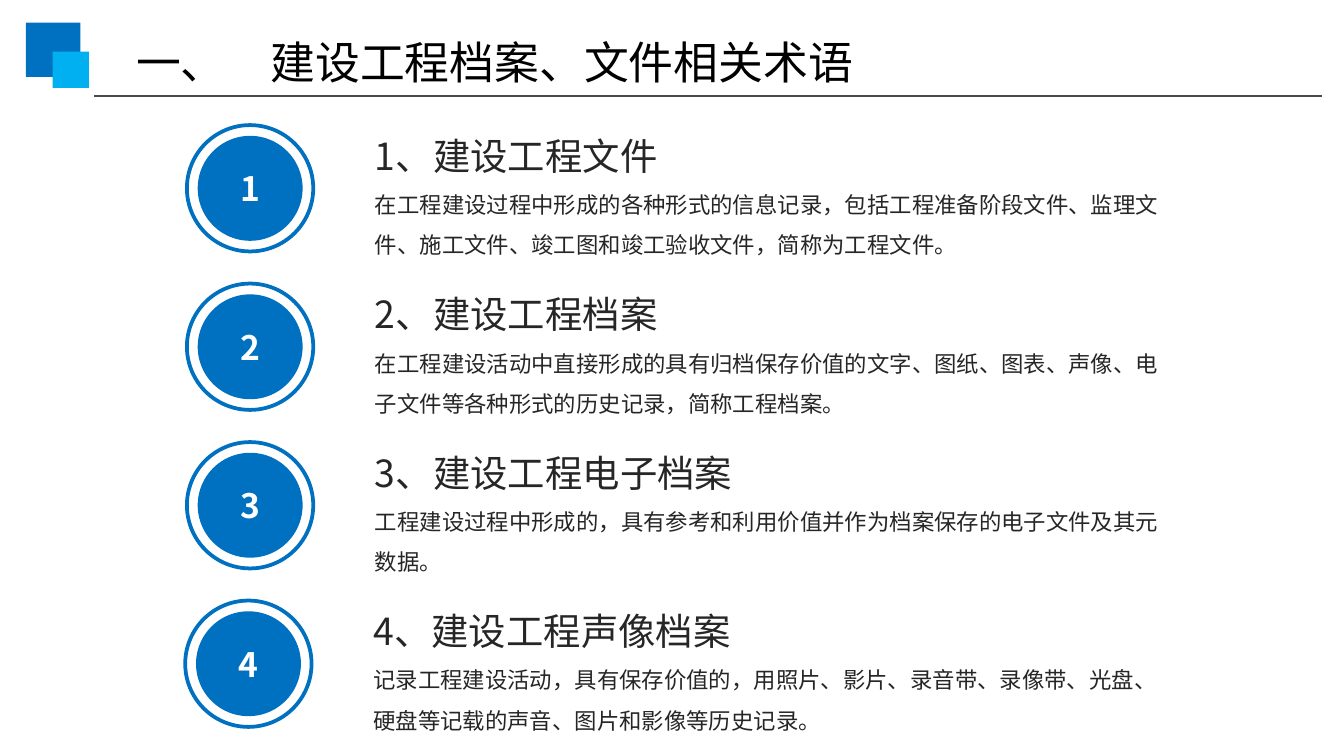
import dataclasses

import lxml.etree
import pptx
import pptx.dml.color
import pptx.enum.shapes
import pptx.enum.text
import pptx.oxml.ns
import pptx.util

Pt = pptx.util.Pt
RGBColor = pptx.dml.color.RGBColor
Shape = pptx.enum.shapes.MSO_SHAPE
Align = pptx.enum.text.PP_ALIGN
Anchor = pptx.enum.text.MSO_ANCHOR
qn = pptx.oxml.ns.qn

BLUE = RGBColor(0x00, 0x70, 0xC0)
SKY = RGBColor(0x00, 0xB0, 0xF0)
RULE_GREY = RGBColor(0x4D, 0x49, 0x48)
INK = RGBColor(0x26, 0x26, 0x26)
BLACK = RGBColor(0x00, 0x00, 0x00)
WHITE = RGBColor(0xFF, 0xFF, 0xFF)
FONT = "Noto Sans CJK SC"

# Vertical rhythm and badge geometry, in points
FIRST_TOP, ROW_STEP = 55.6, 84.9
DISC, RING = 56.2, 67.7
BADGE_CENTRE_Y = 45.3


@dataclasses.dataclass(frozen=True)
class Term:
    heading: str
    definition: str
    shift: float = 0


TERMS = [
    Term("建设工程文件",
         "在工程建设过程中形成的各种形式的信息记录，包括工程准备阶段文件、监理文件、"
         "施工文件、竣工图和竣工验收文件，简称为工程文件。"),
    Term("建设工程档案",
         "在工程建设活动中直接形成的具有归档保存价值的文字、图纸、图表、声像、电子文件"
         "等各种形式的历史记录，简称工程档案。"),
    Term("建设工程电子档案",
         "工程建设过程中形成的，具有参考和利用价值并作为档案保存的电子文件及其元数据。"),
    Term("建设工程声像档案",
         "记录工程建设活动，具有保存价值的，用照片、影片、录音带、录像带、光盘、硬盘"
         "等记载的声音、图片和影像等历史记录。", shift=-0.9),
]


def place(shape, left: float, top: float, width: float, height: float) -> None:
    shape.left, shape.top = Pt(left), Pt(top)
    shape.width, shape.height = Pt(width), Pt(height)


def add_run(paragraph, text: str, size: float, color: RGBColor, bold: bool = False) -> None:
    run = paragraph.add_run()
    run.text = text
    run.font.size = Pt(size)
    run.font.bold = bold
    run.font.color.rgb = color
    run.font.name = FONT
    east_asian = lxml.etree.SubElement(run.font._element, qn("a:ea"))
    east_asian.set("typeface", FONT)


def prepare_frame(frame) -> None:
    frame.word_wrap = True
    frame.auto_size = pptx.enum.text.MSO_AUTO_SIZE.NONE
    frame.vertical_anchor = Anchor.TOP


def add_plain(shapes, kind, left: float, top: float, width: float, height: float,
              fill: RGBColor | None = None, outline: RGBColor | None = None):
    shape = shapes.add_shape(kind, Pt(left), Pt(top), Pt(width), Pt(height))
    shape.shadow.inherit = False
    if fill is None:
        shape.fill.background()
    else:
        shape.fill.solid()
        shape.fill.fore_color.rgb = fill
    if outline is None:
        shape.line.fill.background()
    else:
        shape.line.color.rgb = outline
        shape.line.width = Pt(2)
    return shape


def add_header(slide) -> None:
    add_plain(slide.shapes, Shape.RECTANGLE, 13.9, 12.1, 29.2, 29.2, fill=BLUE)
    add_plain(slide.shapes, Shape.RECTANGLE, 28.2, 27.7, 19.5, 19.5, fill=SKY)
    rule = slide.shapes.add_connector(
        pptx.enum.shapes.MSO_CONNECTOR.STRAIGHT, Pt(708), Pt(51.5), Pt(50.4), Pt(51.5))
    rule.line.color.rgb = RULE_GREY
    rule.line.width = Pt(0.75)
    lxml.etree.SubElement(rule._element.spPr, qn("a:effectLst"))

    title = slide.shapes.title
    place(title, 65.7, 15.1, 461, 36.4)
    prepare_frame(title.text_frame)
    heading = title.text_frame.paragraphs[0]
    heading.alignment = Align.LEFT
    heading.line_spacing = 1.0
    add_run(heading, "一、\t建设工程档案、文件相关术语", 24, BLACK)


def fill_term(body, number: int, term: Term, top: float) -> None:
    place(body, 193.7 + term.shift, top, 438.5, 87.1)
    frame = body.text_frame
    prepare_frame(frame)
    heading, definition = frame.paragraphs[0], frame.add_paragraph()
    for paragraph in (heading, definition):
        properties = paragraph._p.get_or_add_pPr()
        properties.set("marL", "0")
        properties.set("indent", "0")
        lxml.etree.SubElement(properties, qn("a:buNone"))
        paragraph.alignment = Align.LEFT
        paragraph.line_spacing = 1.5
        paragraph.space_before = Pt(0)
    add_run(heading, f"{number}、{term.heading}", 20, INK)
    add_run(definition, term.definition, 12, INK)


def add_badge(slide, number: int, centre_x: float, centre_y: float) -> None:
    badge = slide.shapes.add_group_shape().shapes
    disc = add_plain(badge, Shape.OVAL, centre_x - DISC / 2, centre_y - DISC / 2,
                     DISC, DISC, fill=BLUE)
    disc.text_frame.vertical_anchor = Anchor.MIDDLE
    label = disc.text_frame.paragraphs[0]
    label.alignment = Align.CENTER
    add_run(label, str(number), 18, WHITE, bold=True)
    add_plain(badge, Shape.OVAL, centre_x - RING / 2, centre_y - RING / 2,
              RING, RING, outline=BLUE)


def main() -> None:
    deck = pptx.Presentation()
    deck.slide_width, deck.slide_height = Pt(720), Pt(405)
    # The comparison layout offers a title and four bodies
    slide = deck.slides.add_slide(deck.slide_layouts.get_by_name("Comparison"))
    add_header(slide)

    # One row per term: definition text and numbered badge
    bodies = [p for p in slide.placeholders if p.placeholder_format.idx > 0]
    for row, (body, term) in enumerate(zip(bodies, TERMS)):
        top = FIRST_TOP + row * ROW_STEP
        fill_term(body, row + 1, term, top)
        add_badge(slide, row + 1, 134 + term.shift, top + BADGE_CENTRE_Y)

    deck.save("out.pptx")


if __name__ == "__main__":
    main()
